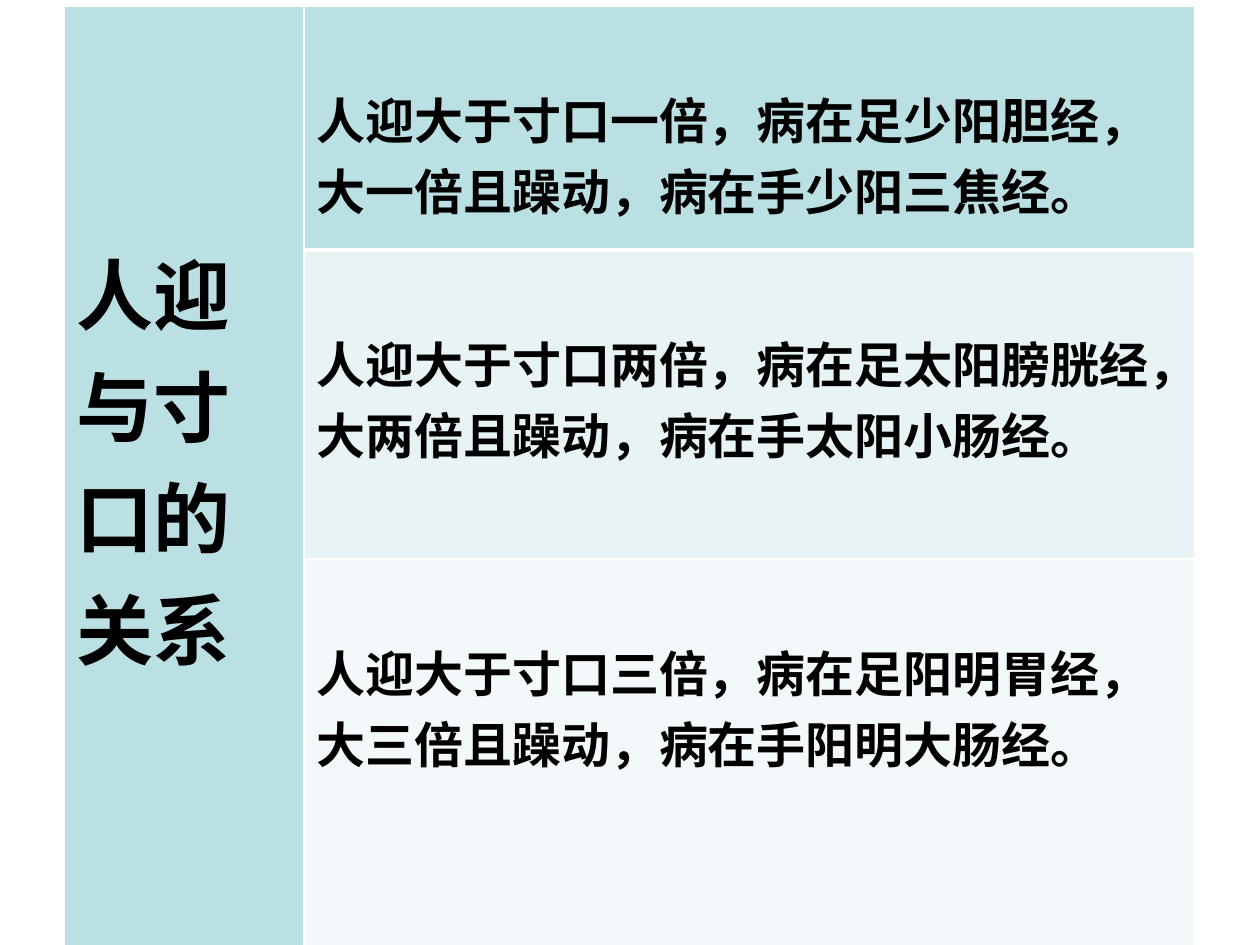
import pptx
import pptx.util
import pptx.dml.color
import pptx.oxml.ns
from lxml import etree

# Content
HEADING = "人迎与寸口的关系"
RELATIONS = [
    "人迎大于寸口一倍，病在足少阳胆经，大一倍且躁动，病在手少阳三焦经。",
    "人迎大于寸口两倍，病在足太阳膀胱经，大两倍且躁动，病在手太阳小肠经。",
    "人迎大于寸口三倍，病在足阳明胃经，大三倍且躁动，病在手阳明大肠经。",
]

THEME = {
    "font": "Noto Sans CJK SC",
    "text": "000000",
    "border": "FFFFFF",
    "heading_fill": "BBE0E3",
    "row_fills": ["BBE0E3", "E7F3F4", "F3F9FA"],
    "heading_size": 44,
    "body_size": 28,
    "thin": 1,
    "thick": 3,
}

# Layout in px, 126 px to the inch
SLIDE = (1260, 945)
LEFT, TOP = 64, 6
COLUMNS = [240, 891]
ROWS = [244, 309, 386]
HEADING_INSET, BODY_INSET = 229, 77


def px(length):
    return pptx.util.Emu(length * 914400 // 126)


def rgb(code):
    return pptx.dml.color.RGBColor.from_string(code)


def set_borders(cell, top, bottom):
    properties = cell._tc.get_or_add_tcPr()
    widths = {"L": THEME["thin"], "R": THEME["thin"], "T": top, "B": bottom}
    for position, (side, width) in enumerate(widths.items()):
        line = etree.Element(pptx.oxml.ns.qn(f"a:ln{side}"), w=str(pptx.util.Pt(width)))
        fill = etree.SubElement(line, pptx.oxml.ns.qn("a:solidFill"))
        etree.SubElement(fill, pptx.oxml.ns.qn("a:srgbClr"), val=THEME["border"])
        properties.insert(position, line)


def fill_cell(cell, text, size, fill, inset):
    cell.fill.solid()
    cell.fill.fore_color.rgb = rgb(fill)
    cell.margin_top = px(inset)
    cell.text_frame.text = text
    run = cell.text_frame.paragraphs[0].runs[0]
    run.font.size = pptx.util.Pt(size)
    run.font.bold = True
    run.font.color.rgb = rgb(THEME["text"])
    run.font.name = THEME["font"]
    # East Asian text takes its own typeface element
    etree.SubElement(run.font._element, pptx.oxml.ns.qn("a:ea"), typeface=THEME["font"])


def main():
    deck = pptx.Presentation()
    deck.slide_width, deck.slide_height = map(px, SLIDE)
    slide = deck.slides.add_slide(deck.slide_layouts[6])

    # Table grid
    table = slide.shapes.add_table(
        len(ROWS), len(COLUMNS), px(LEFT), px(TOP), px(sum(COLUMNS)), px(sum(ROWS))
    ).table
    table.first_row = table.horz_banding = False
    for column, width in zip(table.columns, COLUMNS):
        column.width = px(width)
    for row, height in zip(table.rows, ROWS):
        row.height = px(height)

    # Heading down the left side
    heading = table.cell(0, 0)
    heading.merge(table.cell(len(ROWS) - 1, 0))
    fill_cell(heading, HEADING, THEME["heading_size"], THEME["heading_fill"], HEADING_INSET)
    set_borders(heading, THEME["thin"], THEME["thick"])

    # One relation per row, with a thick rule under the first
    for index, (relation, fill) in enumerate(zip(RELATIONS, THEME["row_fills"])):
        cell = table.cell(index, 1)
        fill_cell(cell, relation, THEME["body_size"], fill, BODY_INSET)
        set_borders(
            cell,
            THEME["thick"] if index == 1 else THEME["thin"],
            THEME["thick"] if index == 0 else THEME["thin"],
        )

    deck.save("out.pptx")


if __name__ == "__main__":
    main()
